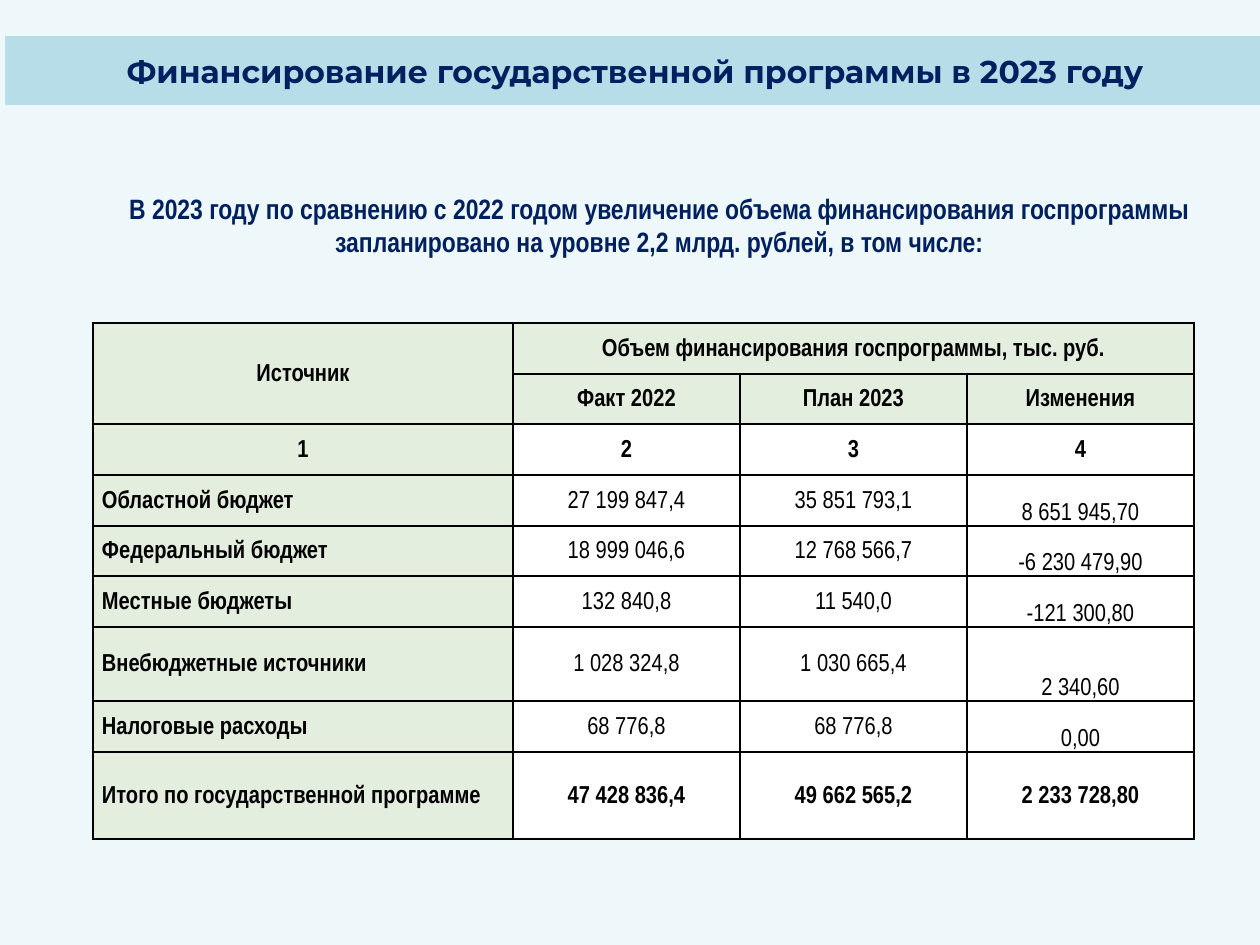
from dataclasses import dataclass

from lxml.etree import SubElement
from pptx import Presentation
from pptx.dml.color import RGBColor
from pptx.dml.fill import FillFormat
from pptx.enum.text import MSO_ANCHOR, PP_ALIGN
from pptx.oxml.ns import qn
from pptx.util import Emu, Pt

PX_PER_INCH = 126
NAVY = "002060"
BLACK = "000000"
WHITE = "FFFFFF"
SKY = "B7DEE8"
SAGE = "D7E4BD"
BODY_FONT = "Arial Narrow"


@dataclass(frozen=True)
class Budget:
    source: str
    fact: str
    plan: str
    change: str
    height: int
    is_total: bool = False


@dataclass(frozen=True)
class CellStyle:
    bold: bool = True
    tinted: bool = False
    align: PP_ALIGN = PP_ALIGN.CENTER
    anchor: MSO_ANCHOR = MSO_ANCHOR.MIDDLE


HEADING = CellStyle(tinted=True)
SOURCE = CellStyle(tinted=True, align=PP_ALIGN.LEFT)
STRONG = CellStyle()
AMOUNT = CellStyle(bold=False)
CHANGE = CellStyle(bold=False, anchor=MSO_ANCHOR.BOTTOM)

BUDGETS = [
    Budget("Областной бюджет", "27 199 847,4", "35 851 793,1", "8 651 945,70", 51),
    Budget("Федеральный бюджет", "18 999 046,6", "12 768 566,7", "-6 230 479,90", 50),
    Budget("Местные бюджеты", "132 840,8", "11 540,0", "-121 300,80", 51),
    Budget("Внебюджетные источники", "1 028 324,8", "1 030 665,4", "2 340,60", 74),
    Budget("Налоговые расходы", "68 776,8", "68 776,8", "0,00", 51),
    Budget("Итого по государственной программе", "47 428 836,4", "49 662 565,2",
           "2 233 728,80", 87, True),
]
HEADING_HEIGHTS = [51, 50, 51]
COLUMN_WIDTHS = [420, 227, 227, 227]


def px(length: int) -> Emu:
    return Emu(round(length * 914400 / PX_PER_INCH))


def color(value: str) -> RGBColor:
    return RGBColor.from_string(value)


def paint(fill: FillFormat, value: str) -> None:
    fill.solid()
    fill.fore_color.rgb = color(value)


def set_opacity(parent, percent: int) -> None:
    for srgb in parent.findall(f"{qn('a:solidFill')}/{qn('a:srgbClr')}"):
        SubElement(srgb, qn("a:alpha"), val=str(percent * 1000))


def style_paragraph(paragraph, font_name: str, size: int, value: str,
                    bold: bool = True, align: PP_ALIGN = PP_ALIGN.CENTER) -> None:
    paragraph.alignment = align
    font = paragraph.font
    font.name, font.size, font.bold = font_name, Pt(size), bold
    font.color.rgb = color(value)


def add_borders(cell) -> None:
    properties = cell._tc.get_or_add_tcPr()
    for side in ("lnL", "lnR", "lnT", "lnB"):
        border = SubElement(properties, qn(f"a:{side}"), w=str(Pt(1)))
        border_fill = SubElement(border, qn("a:solidFill"))
        SubElement(border_fill, qn("a:srgbClr"), val=BLACK)


def fill_cell(cell, text: str, style: CellStyle) -> None:
    cell.text = text
    cell.margin_left = cell.margin_right = px(9)
    cell.margin_top = cell.margin_bottom = 0
    cell.vertical_anchor = style.anchor
    add_borders(cell)
    paint(cell.fill, SAGE if style.tinted else WHITE)
    if style.tinted:
        set_opacity(cell._tc.tcPr, 44)
    paragraph = cell.text_frame.paragraphs[0]
    style_paragraph(paragraph, BODY_FONT, 14, BLACK, style.bold, style.align)
    paragraph.line_spacing = 1.15


def add_title(slide) -> None:
    title = slide.shapes.title
    title.left, title.top, title.width, title.height = px(5), px(36), px(1260), px(69)
    paint(title.fill, SKY)
    frame = title.text_frame
    frame.text = "Финансирование государственной программы в 2023 году"
    frame.word_wrap = True
    frame.vertical_anchor = MSO_ANCHOR.MIDDLE
    style_paragraph(frame.paragraphs[0], "Montserrat", 18, NAVY)


def add_summary(slide) -> None:
    frame = slide.shapes.add_textbox(px(94), px(185), px(1131), px(81)).text_frame
    frame.word_wrap = True
    frame.text = (
        "В 2023 году по сравнению с 2022 годом увеличение объема финансирования "
        "госпрограммы запланировано на уровне 2,2 млрд. рублей, в том числе:"
    )
    style_paragraph(frame.paragraphs[0], BODY_FONT, 16, NAVY)


def add_budget_table(slide) -> None:
    heights = HEADING_HEIGHTS + [budget.height for budget in BUDGETS]
    table = slide.shapes.add_table(
        len(heights), len(COLUMN_WIDTHS), px(93), px(323),
        px(sum(COLUMN_WIDTHS)), px(sum(heights)),
    ).table
    table.first_row = table.horz_banding = False
    for column, width in zip(table.columns, COLUMN_WIDTHS):
        column.width = px(width)
    for row, height in zip(table.rows, heights):
        row.height = px(height)

    table.cell(0, 0).merge(table.cell(1, 0))
    table.cell(0, 1).merge(table.cell(0, 3))
    rows = [
        (("Источник", "Объем финансирования госпрограммы, тыс. руб.", "", ""),
         (HEADING,) * 4),
        (("", "Факт 2022", "План 2023", "Изменения"), (HEADING,) * 4),
        (("1", "2", "3", "4"), (HEADING, STRONG, STRONG, STRONG)),
    ]
    for budget in BUDGETS:
        styles = (STRONG,) * 3 if budget.is_total else (AMOUNT, AMOUNT, CHANGE)
        texts = (budget.source, budget.fact, budget.plan, budget.change)
        rows.append((texts, (SOURCE, *styles)))
    for row, (texts, styles) in zip(table.rows, rows):
        for cell, text, style in zip(row.cells, texts, styles):
            fill_cell(cell, text, style)


def main() -> None:
    presentation = Presentation()
    presentation.slide_width, presentation.slide_height = px(1260), px(945)
    slide = presentation.slides.add_slide(presentation.slide_layouts[5])
    paint(slide.background.fill, SKY)
    set_opacity(slide.background._cSld.bg.bgPr, 23)
    add_title(slide)
    add_summary(slide)
    add_budget_table(slide)
    presentation.save("out.pptx")


if __name__ == "__main__":
    main()
